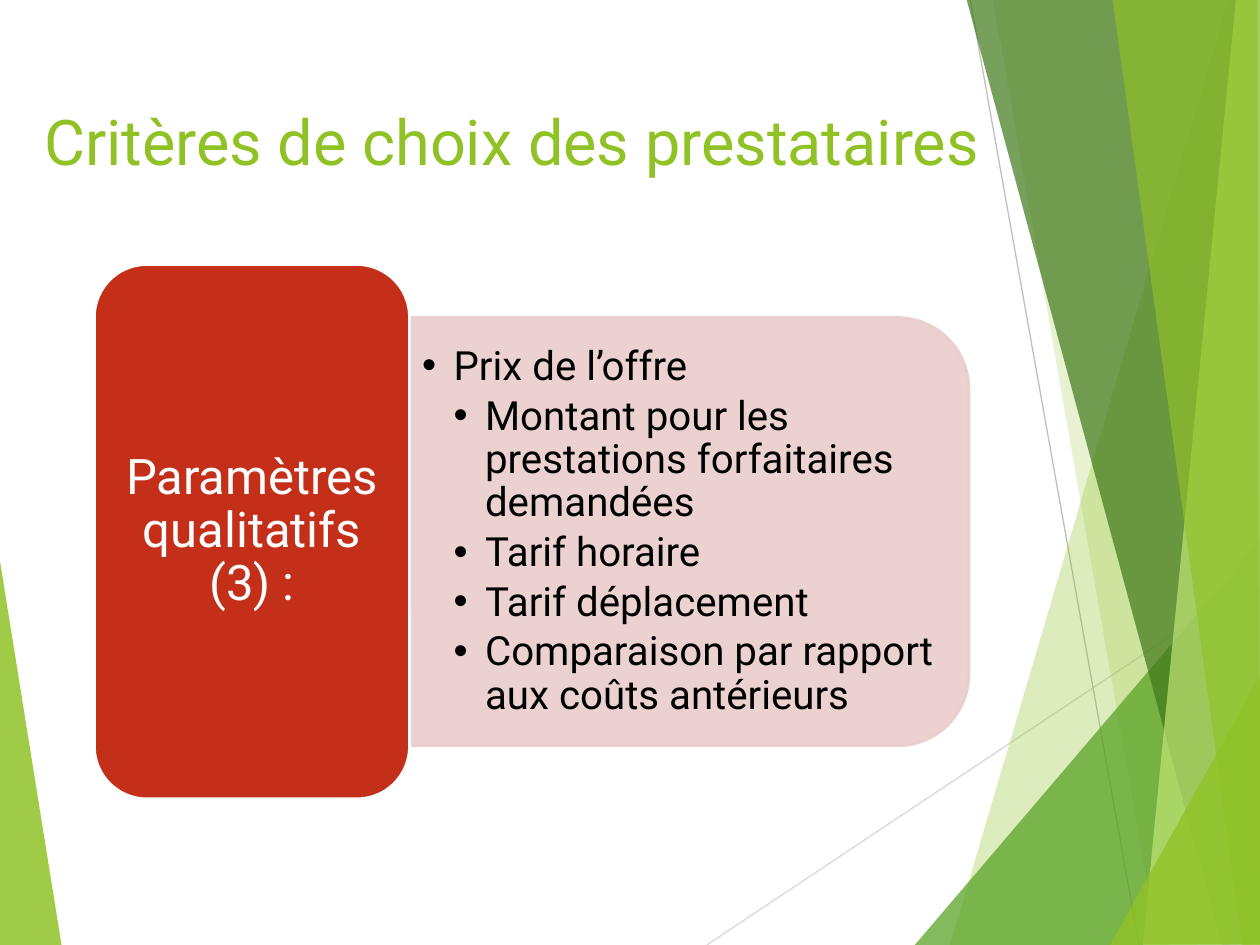
from lxml import etree
from pptx import Presentation
from pptx.dml.color import RGBColor
from pptx.enum.shapes import MSO_CONNECTOR, MSO_SHAPE
from pptx.enum.text import MSO_ANCHOR, MSO_AUTO_SIZE, PP_ALIGN
from pptx.oxml.ns import qn
from pptx.util import Inches, Pt

STRAIGHT = MSO_CONNECTOR.STRAIGHT
ROUND, ROUND_TOP = MSO_SHAPE.ROUNDED_RECTANGLE, MSO_SHAPE.ROUND_2_SAME_RECTANGLE
TOP, MIDDLE = MSO_ANCHOR.TOP, MSO_ANCHOR.MIDDLE
LEFT, CENTER = PP_ALIGN.LEFT, PP_ALIGN.CENTER
NO_FIT = MSO_AUTO_SIZE.NONE


def paint(fmt, color, opacity=100):
    fmt.solid()
    fmt.fore_color.rgb = RGBColor.from_string(color)
    if opacity < 100:
        clr = fmt._xPr.find(qn("a:solidFill"))[0]
        etree.SubElement(clr, qn("a:alpha")).set("val", str(opacity * 1000))


def write(p, text, size=18, color="000000", align=LEFT, spacing=1.0, after=0):
    p.alignment = align
    p.line_spacing = spacing
    p.space_before, p.space_after = Pt(0), Pt(after)
    r = p.add_run()
    r.text = text
    r.font.name, r.font.size = "Roboto", Pt(size)
    paint(r.font.fill, color)


prs = Presentation()
prs.slide_width, prs.slide_height = Inches(10), Inches(7.5)
s = prs.slides.add_slide(prs.slide_layouts[1])
title, body = s.placeholders[0], s.placeholders[1]

lines = [
    (5.61, 7.5, 10.01, 4.57, "D9D9D9"),
    (7.7, 0, 9.04, 7.5, "BFBFBF"),
]
for x1, y1, x2, y2, color in lines:
    c = s.shapes.add_connector(STRAIGHT, Inches(x1), Inches(y1), Inches(x2), Inches(y2))
    paint(c.line.fill, color)
    c.line.width = Pt(0.75)
    etree.SubElement(c._element.spPr, qn("a:effectLst"))

facets = [
    ("90C226", 85, [(-0.01, 4.39), (0.49, 7.51), (-0.01, 7.5)]),
    ("90C226", 30, [(9.75, 0), (7.54, 7.5), (10.02, 7.51), (10.01, 0.01)]),
    ("90C226", 20, [(7.88, -0.01), (9.19, 7.5), (10.01, 7.5), (10.01, -0.01)]),
    ("54A021", 72, [(7.26, 7.5), (10, 4.29), (10.01, 7.5)]),
    ("3F7819", 70, [(7.67, -0.01), (9.7, 7.5), (10.01, 7.49), (10.01, -0.01)]),
    ("C0E474", 70, [(9.81, -0.01), (9.07, 7.5), (10.01, 7.5), (10, -0.01)]),
    ("90C226", 65, [(8.83, -0.01), (9.86, 7.5), (10, 7.5), (9.98, -0.01)]),
    ("90C226", 80, [(8.81, 7.5), (10.01, 5.35), (10.01, 7.49)]),
]
for color, opacity, points in facets:
    pts = [(Inches(x), Inches(y)) for x, y in points]
    builder = s.shapes.build_freeform(*pts[0])
    builder.add_line_segments(pts[1:])
    sp = builder.convert_to_shape()
    sp.shadow.inherit = False
    paint(sp.fill, color, opacity)
    sp.line.fill.background()

panel = s.shapes.add_shape(ROUND_TOP, Inches(3.77), Inches(2), Inches(3.4), Inches(4.44))
panel.rotation = 90
panel.shadow.inherit = False
paint(panel.fill, "EACDCD", 90)
paint(panel.line.fill, "EACDCD", 90)
panel.line.width = Pt(1.5)

card = s.shapes.add_shape(ROUND, Inches(0.75), Inches(2.1), Inches(2.5), Inches(4.24))
card.shadow.inherit = False
paint(card.fill, "C42F1A")
paint(card.line.fill, "FFFFFF")
card.line.width = Pt(1.5)
tf = card.text_frame
tf.word_wrap = True
tf.vertical_anchor = MIDDLE
tf.margin_left = tf.margin_right = Inches(0.12)
write(tf.paragraphs[0], "Paramètres qualitatifs (3) :", size=28, color="FFFFFF",
      align=CENTER, spacing=0.9, after=9.8)

boxes = [
    (title, 0.25, 0.76, 9.5, 1.25, TOP),
    (body, 3.25, 2.69, 4.28, 3.06, MIDDLE),
]
for ph, x, y, w, h, anchor in boxes:
    ph.left, ph.top, ph.width, ph.height = Inches(x), Inches(y), Inches(w), Inches(h)
    ph.text_frame.word_wrap = True
    ph.text_frame.auto_size = NO_FIT
    ph.text_frame.vertical_anchor = anchor
    s.shapes._spTree.append(ph._element)

write(title.text_frame.paragraphs[0], "Critères de choix des prestataires",
      size=36, color="90C226")

items = [
    (0, "Prix de l’offre"),
    (1, "Montant pour les prestations forfaitaires demandées"),
    (1, "Tarif horaire"),
    (1, "Tarif déplacement"),
    (1, "Comparaison par rapport aux coûts antérieurs"),
]
tf = body.text_frame
for i, (level, text) in enumerate(items):
    p = tf.add_paragraph() if i else tf.paragraphs[0]
    p.level = level
    write(p, text, size=23, spacing=0.9, after=3.5)
    pPr = p._p.get_or_add_pPr()
    pPr.set("marL", str(Inches(0.25 * (level + 1))))
    pPr.set("indent", str(Inches(-0.25)))
    etree.SubElement(pPr, qn("a:buChar")).set("char", "•")

prs.save("out.pptx")
